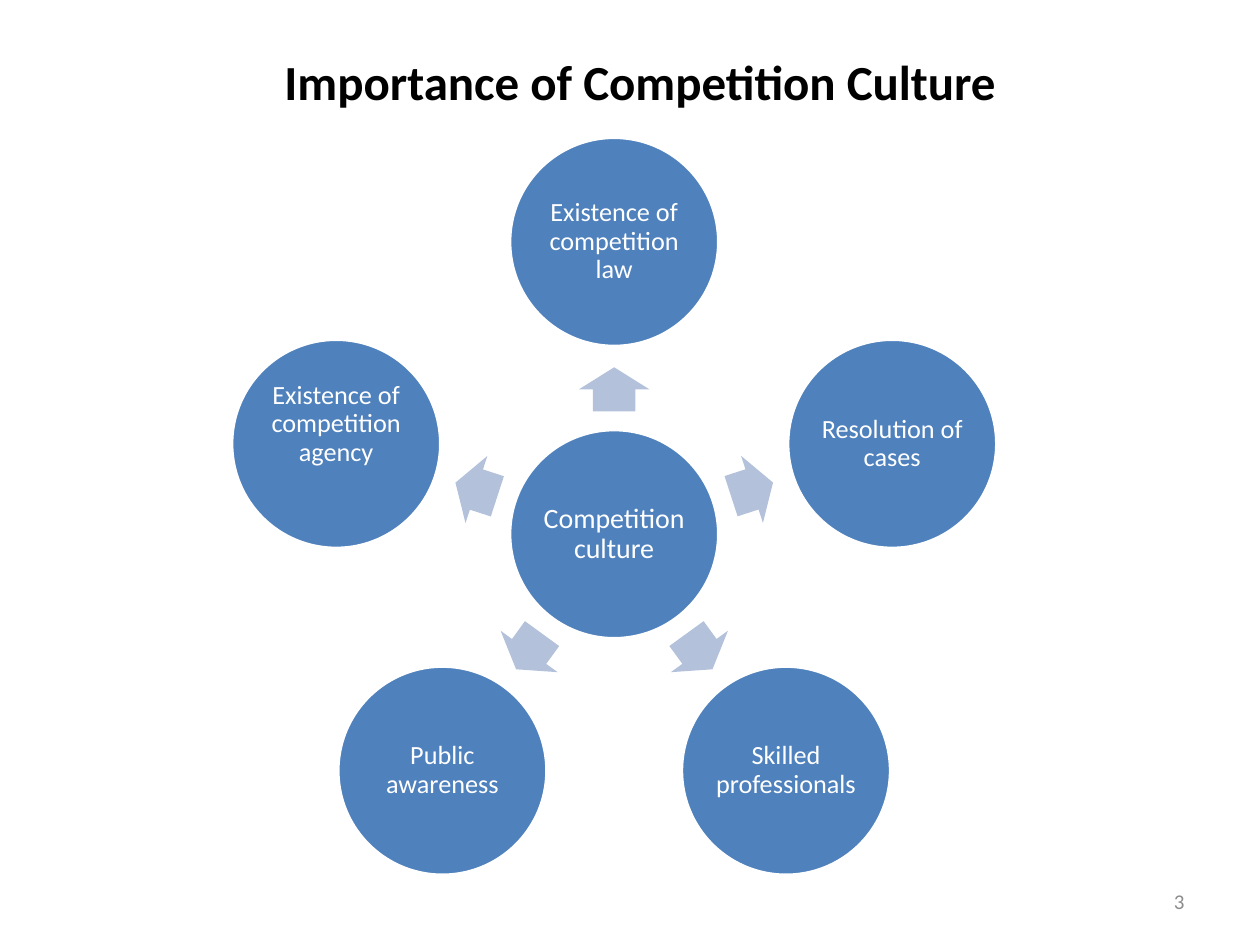
from math import cos, radians, sin

from pptx import Presentation
from pptx.dml.color import RGBColor
from pptx.enum.shapes import MSO_SHAPE as Preset
from pptx.enum.text import MSO_ANCHOR as Anchor, PP_ALIGN as Align
from pptx.util import Inches, Pt

COLUMNS, ROWS = 100, 75
CELL = Inches(10) // COLUMNS
HUB_COLUMN, HUB_ROW = 48.75, 42.4
CIRCLE_SIZE = 16.6
CIRCLE_ORBIT, ARROW_ORBIT = 23.2, 11.5
ARROW_LENGTH, ARROW_WIDTH = 3.5, 5.6
AGENCY_LIFT = 3.1
SPOKES = [
    ("Existence of competition law", 0),
    ("Resolution of cases", 0),
    ("Skilled professionals", 0),
    ("Public awareness", 0),
    ("Existence of competition agency", AGENCY_LIFT),
]


def cells(count):
    """Convert a number of grid cells to a length."""
    return round(count * CELL)


def color(hex_code):
    """Turn a hex string into a colour."""
    return RGBColor.from_string(hex_code)


def write(shape, text, size, hex_code, align=Align.CENTER, bold=False):
    """Put one formatted, vertically centred paragraph in a shape."""
    text_frame = shape.text_frame
    text_frame.text = text
    text_frame.word_wrap = True
    text_frame.vertical_anchor = Anchor.MIDDLE
    paragraph = text_frame.paragraphs[0]
    paragraph.alignment = align
    font = paragraph.runs[0].font
    font.name, font.size, font.bold = "Calibri", Pt(size), bold
    font.color.rgb = color(hex_code)
    return paragraph


def add_label(slide, box, *style, **options):
    """Add a text box at the given column, row, width and height."""
    shape = slide.shapes.add_textbox(*map(cells, box))
    write(shape, *style, **options)


def add_centered(slide, preset, center, width, height, fill):
    """Add a filled preset shape around a centre point."""
    column, row = center
    shape = slide.shapes.add_shape(
        preset, cells(column - width / 2), cells(row - height / 2),
        cells(width), cells(height))
    shape.shadow.inherit = False
    shape.fill.solid()
    shape.fill.fore_color.rgb = color(fill)
    shape.line.fill.background()
    return shape


def add_circle(slide, center, text, size, lift=0):
    """Add a white-rimmed circle, its text lifted by a bottom margin."""
    circle = add_centered(
        slide, Preset.OVAL, center, CIRCLE_SIZE, CIRCLE_SIZE, "4F81BD")
    circle.line.color.rgb = color("FFFFFF")
    circle.line.width = Pt(2)
    paragraph = write(circle, text, size, "FFFFFF")
    paragraph.line_spacing = 0.9
    text_frame = circle.text_frame
    text_frame.margin_left = text_frame.margin_right = cells(0.2)
    text_frame.margin_top = cells(0.2)
    text_frame.margin_bottom = cells(0.2 + lift)


def add_arrow(slide, center, angle):
    """Add a block arrow pointing along the angle."""
    arrow = add_centered(
        slide, Preset.RIGHT_ARROW, center, ARROW_LENGTH, ARROW_WIDTH, "B3C1DB")
    arrow.adjustments[0], arrow.adjustments[1] = 0.6, 0.5
    arrow.rotation = angle % 360


def around_hub(orbit, angle):
    """Find the point on an orbit around the hub."""
    turn = radians(angle)
    return HUB_COLUMN + orbit * cos(turn), HUB_ROW + orbit * sin(turn)


def add_wheel(slide):
    """Add the hub with an arrow and a circle for each spoke."""
    add_circle(slide, (HUB_COLUMN, HUB_ROW), "Competition culture", 16)
    for index, (text, lift) in enumerate(SPOKES):
        angle = index * 360 / len(SPOKES) - 90
        add_arrow(slide, around_hub(ARROW_ORBIT, angle), angle)
        add_circle(slide, around_hub(CIRCLE_ORBIT, angle), text, 15, lift)


def main():
    """Build and save the slide."""
    presentation = Presentation()
    presentation.slide_width = cells(COLUMNS)
    presentation.slide_height = cells(ROWS)
    slide = presentation.slides.add_slide(presentation.slide_layouts[6])
    add_wheel(slide)
    add_label(slide, (71.7, 69.5, 23.3, 4), "3", 12, "8C8C8C", align=Align.RIGHT)
    add_label(slide, (5.8, 0.2, 90, 12.5), "Importance of Competition Culture",
              28, "000000", bold=True)
    presentation.save("out.pptx")


if __name__ == "__main__":
    main()
